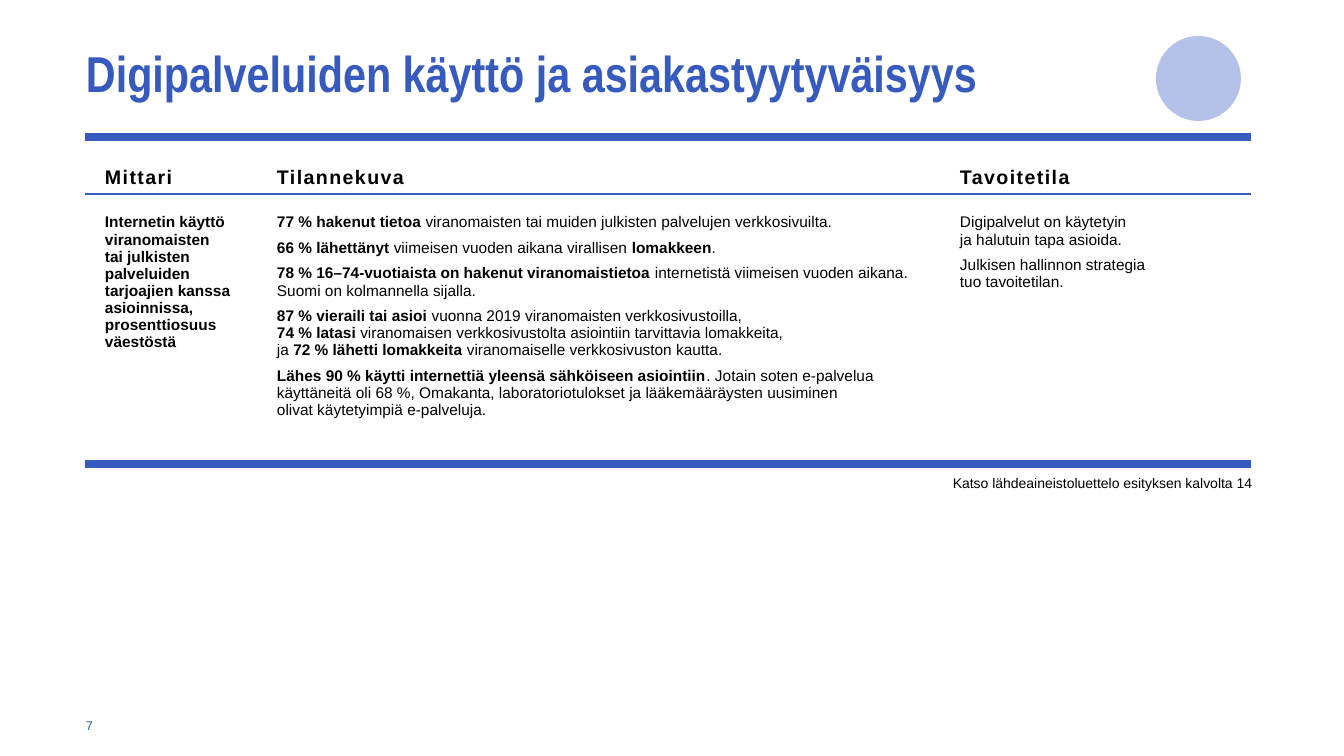
from lxml import etree
from pptx import Presentation
from pptx.dml.color import RGBColor
from pptx.enum.shapes import MSO_SHAPE
from pptx.enum.text import MSO_ANCHOR as ANCHOR, MSO_AUTO_SIZE as AUTO, PP_ALIGN as ALIGN
from pptx.oxml.ns import qn
from pptx.util import Pt

PX = 914400 / 100.8
BLUE = RGBColor(0x36, 0x5A, 0xBD)
PALE = RGBColor(0xAC, 0xBC, 0xE7)
BLACK = RGBColor(0, 0, 0)
THICK, THIN = 6, 1

COLUMNS = [157, 692, 317]
ROWS = [57, 270]
INDENTS = [20, 35, 26]
HEADERS = ["Mittari", "Tilannekuva", "Tavoitetila"]

# Body cells: paragraphs of runs, where "*" marks a bold run
BODY = [
    [["*Internetin käyttö viranomaisten tai julkisten palveluiden "
      "tarjoajien kanssa asioinnissa, prosenttiosuus väestöstä"]],
    [["*77 % hakenut tietoa ",
      "viranomaisten tai muiden julkisten palvelujen verkkosivuilta."],
     ["*66 % lähettänyt ", "viimeisen vuoden aikana virallisen ", "*lomakkeen", "."],
     ["*78 % 16–74-vuotiaista on hakenut viranomaistietoa ",
      "internetistä viimeisen vuoden aikana.\nSuomi on kolmannella sijalla."],
     ["*87 % vieraili tai asioi ", "vuonna 2019 viranomaisten verkkosivustoilla,\n",
      "*74 % latasi ",
      "viranomaisen verkkosivustolta asiointiin tarvittavia lomakkeita,\nja ",
      "*72 % lähetti lomakkeita ", "viranomaiselle verkkosivuston kautta."],
     ["*Lähes 90 % käytti internettiä yleensä sähköiseen asiointiin",
      ". Jotain soten e-palvelua\nkäyttäneitä oli 68 %, Omakanta, laboratoriotulokset "
      "ja lääkemääräysten uusiminen\nolivat käytetyimpiä e-palveluja."]],
    [["Digipalvelut on käytetyin\nja halutuin tapa asioida."],
     ["Julkisen hallinnon strategia\ntuo tavoitetilan."]],
]


def px(n):
    return round(n * PX)


def box(*lengths):
    return [px(n) for n in lengths]


def set_font(p, size, color, name="Arial"):
    p.font.size, p.font.name = Pt(size), name
    p.font.color.rgb = color


def set_margins(target, left=0, top=0, right=0, bottom=0):
    target.margin_left, target.margin_top = px(left), px(top)
    target.margin_right, target.margin_bottom = px(right), px(bottom)


def add_runs(p, runs):
    for text in runs:
        for i, line in enumerate(text.lstrip("*").split("\n")):
            if i:
                p.add_line_break()
            if line:
                r = p.add_run()
                r.text, r.font.bold = line, text.startswith("*")


def set_borders(cell, top, bottom):
    tcPr = cell._tc.get_or_add_tcPr()
    for side, width in (("L", 0), ("R", 0), ("T", top), ("B", bottom)):
        ln = etree.SubElement(tcPr, qn(f"a:ln{side}"), w=str(Pt(width)))
        if width:
            fill = etree.SubElement(ln, qn("a:solidFill"))
            etree.SubElement(fill, qn("a:srgbClr"), val=str(BLUE))
        else:
            etree.SubElement(ln, qn("a:noFill"))
    cell.fill.background()


def add_title(s, x, y, w, h):
    title = s.shapes.title
    title.left, title.top, title.width, title.height = box(x, y, w, h)
    tf = title.text_frame
    set_margins(tf)
    tf.auto_size, tf.vertical_anchor = AUTO.NONE, ANCHOR.MIDDLE
    tf.text = "Digipalveluiden käyttö ja asiakastyytyväisyys"
    p = tf.paragraphs[0]
    p.alignment, p.line_spacing = ALIGN.LEFT, 0.95
    set_font(p, 36, BLUE, "Arial Narrow")
    p.font.bold = True


def add_circle(s, x, y, size):
    sp = s.shapes.add_shape(MSO_SHAPE.OVAL, *box(x, y, size, size))
    sp.shadow.inherit = False
    sp.fill.solid()
    sp.fill.fore_color.rgb = PALE
    color = sp._element.spPr.find(qn("a:solidFill"))[0]
    etree.SubElement(color, qn("a:alpha"), val="90000")
    sp.line.fill.background()


def add_measures(s, x, y):
    frame = s.shapes.add_table(2, 3, *box(x, y, sum(COLUMNS), sum(ROWS)))
    table = frame.table
    table.first_row = table.horz_banding = False
    for row, height in zip(table.rows, ROWS):
        row.height = px(height)
    for c, (width, indent) in enumerate(zip(COLUMNS, INDENTS)):
        table.columns[c].width = px(width)

        # Header cell
        head = table.cell(0, c)
        set_margins(head, indent, 5, 10, 5)
        set_borders(head, THICK, THIN)
        head.vertical_anchor = ANCHOR.BOTTOM
        p = head.text_frame.paragraphs[0]
        set_font(p, 14, BLACK)
        add_runs(p, ["*" + HEADERS[c]])
        p.runs[0]._r.get_or_add_rPr().set("spc", "100")

        # Body cell
        body = table.cell(1, c)
        set_margins(body, indent, 20, 10, 5)
        set_borders(body, THIN, THICK)
        tf = body.text_frame
        for i, runs in enumerate(BODY[c]):
            p = tf.add_paragraph() if i else tf.paragraphs[0]
            p.space_after = Pt(6)
            set_font(p, 11, BLACK)
            add_runs(p, runs)


def add_note(s, x, y, w, h, text, size, color, align):
    tf = s.shapes.add_textbox(*box(x, y, w, h)).text_frame
    tf.word_wrap = True
    set_margins(tf)
    p = tf.paragraphs[0]
    p.text, p.alignment = text, align
    set_font(p, size, color)


def main():
    prs = Presentation()
    prs.slide_width, prs.slide_height = box(1344, 756)
    s = prs.slides.add_slide(prs.slide_layouts[5])
    add_title(s, 86, 29, 1050, 92)
    add_circle(s, 1156, 36, 85)
    add_measures(s, 85, 137)
    # Source note and page number
    add_note(s, 850, 474, 402, 34, "Katso lähdeaineistoluettelo esityksen kalvolta 14",
             10, BLACK, ALIGN.RIGHT)
    add_note(s, 86, 718, 40, 25, "7", 9, BLUE, ALIGN.LEFT)
    prs.save("out.pptx")


if __name__ == "__main__":
    main()
